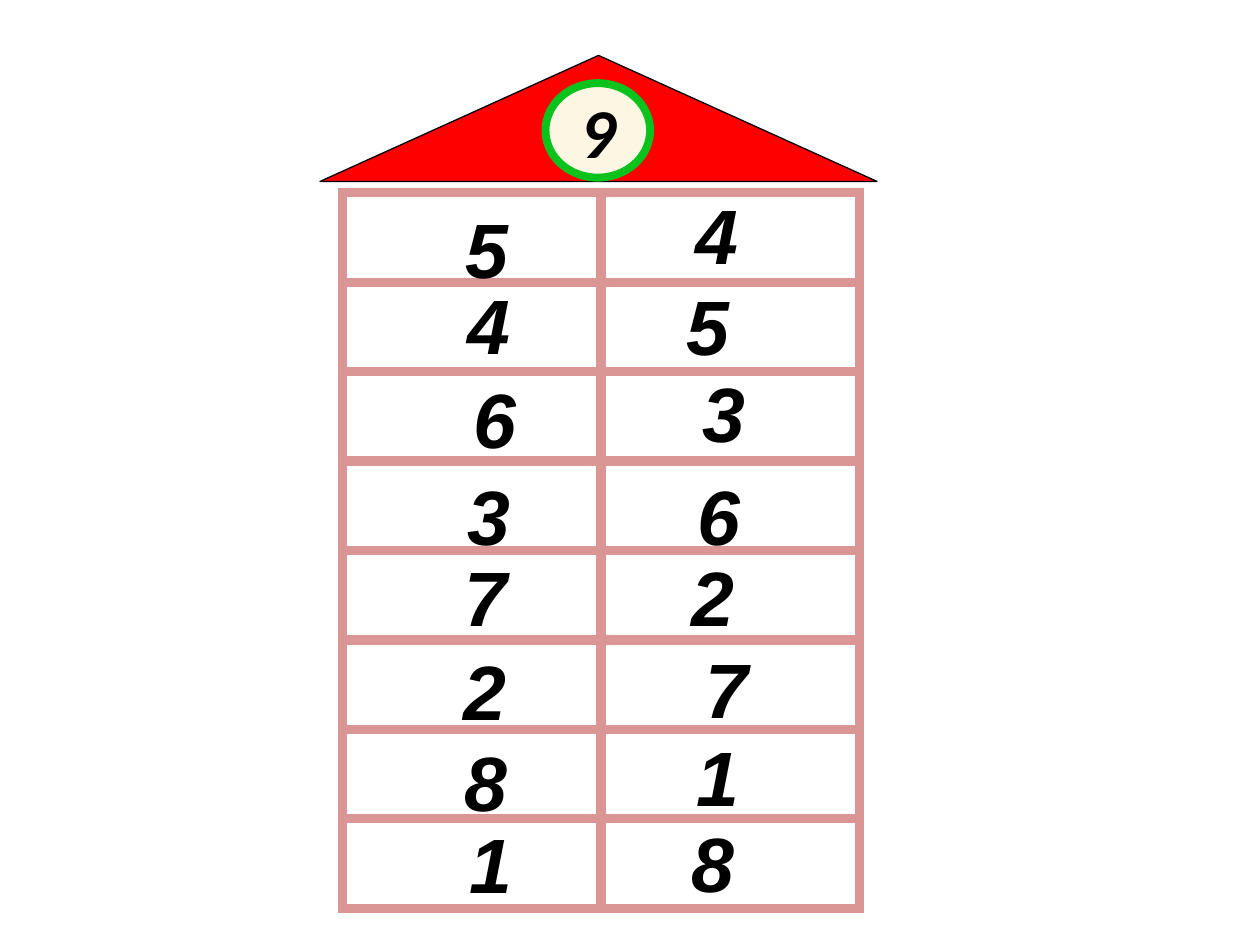
from lxml import etree
from pptx import Presentation
from pptx.dml.color import RGBColor
from pptx.enum.shapes import MSO_SHAPE
from pptx.enum.text import MSO_ANCHOR, MSO_AUTO_SIZE, PP_ALIGN
from pptx.oxml.ns import qn
from pptx.util import Pt

TRIANGLE = MSO_SHAPE.ISOSCELES_TRIANGLE
ELLIPSE = MSO_SHAPE.OVAL
MIDDLE = MSO_ANCHOR.MIDDLE
CENTER = PP_ALIGN.CENTER
GROW = MSO_AUTO_SIZE.SHAPE_TO_FIT_TEXT
EMU_PER_PX = 9144
BLANK_LAYOUT = 6
FLOOR_COUNT = 8
DIGIT_HEIGHT = 84

LEFT_DIGITS = [
    ("5", 360, 155, 73),
    ("4", 361, 215, 84),
    ("6", 366, 290, 79),
    ("3", 361, 367, 71),
    ("7", 359, 431, 74),
    ("2", 358, 506, 75),
    ("8", 359, 578, 74),
    ("1", 363, 643, 82),
]
RIGHT_DIGITS = [
    ("4", 542, 144, 84),
    ("5", 535, 216, 73),
    ("3", 548, 285, 71),
    ("6", 544, 367, 79),
    ("2", 539, 431, 75),
    ("7", 550, 504, 74),
    ("1", 543, 574, 82),
    ("8", 539, 642, 74),
]


def px(*lengths):
    return [length * EMU_PER_PX for length in lengths]


def color(value):
    return RGBColor.from_string(value)


def set_values(target, values):
    for name, value in values.items():
        setattr(target, name, value)


class House:
    text_color = "000000"
    wall_color = "D99694"
    wall_width = Pt(6)
    digit_font = {"name": "Arial", "size": Pt(44), "bold": True, "italic": True}
    badge_font = {"name": "Calibri", "size": Pt(40), "bold": True, "italic": True}

    def __init__(self, slide):
        self.shapes = slide.shapes

    def add_text(self, box, text, font, para_format):
        para = box.text_frame.paragraphs[0]
        set_values(para, para_format)
        span = para.add_run()
        span.text = text
        set_values(span.font, font)
        span.font.color.rgb = color(self.text_color)

    def shape(self, kind, place, fill, line, line_width):
        shape = self.shapes.add_shape(kind, *px(*place))
        shape.shadow.inherit = False
        shape.fill.solid()
        shape.fill.fore_color.rgb = color(fill)
        shape.line.color.rgb = color(line)
        shape.line.width = line_width
        return shape

    def badge(self, text, place, fill, line, line_width):
        badge = self.shape(ELLIPSE, place, fill, line, line_width)
        set_values(badge.text_frame, {"word_wrap": False, "vertical_anchor": MIDDLE})
        self.add_text(badge, text, self.badge_font, {"alignment": CENTER})

    def digit(self, text, left, top, width):
        box = self.shapes.add_textbox(*px(left, top, width, DIGIT_HEIGHT))
        set_values(box.text_frame, {"word_wrap": True, "auto_size": GROW})
        self.add_text(box, text, self.digit_font, {"space_before": Pt(3)})

    def walls(self, cell):
        properties = cell._tc.get_or_add_tcPr()
        for side in ("a:lnL", "a:lnR", "a:lnT", "a:lnB"):
            line = etree.SubElement(properties, qn(side), w=str(self.wall_width))
            fill = etree.SubElement(line, qn("a:solidFill"))
            etree.SubElement(fill, qn("a:srgbClr"), val=self.wall_color)
        cell.fill.background()

    def floors(self, rows, columns, place):
        table = self.shapes.add_table(rows, columns, *px(*place)).table
        set_values(table, {"first_row": False, "horz_banding": False})
        for cell in table.iter_cells():
            self.walls(cell)


def main():
    deck = Presentation()
    deck.slide_width, deck.slide_height = px(1000, 750)
    page = deck.slides.add_slide(deck.slide_layouts[BLANK_LAYOUT])
    house = House(page)
    house.floors(FLOOR_COUNT, 2, (272, 153, 410, 71 * FLOOR_COUNT))
    house.shape(TRIANGLE, (254, 44, 442, 100), "FF0000", "000000", Pt(0.75))
    house.badge("9", (433, 66, 83, 75), "FDF6E3", "0AC21C", Pt(4.5))
    for digit in LEFT_DIGITS + RIGHT_DIGITS:
        house.digit(*digit)
    deck.save("out.pptx")


if __name__ == "__main__":
    main()
